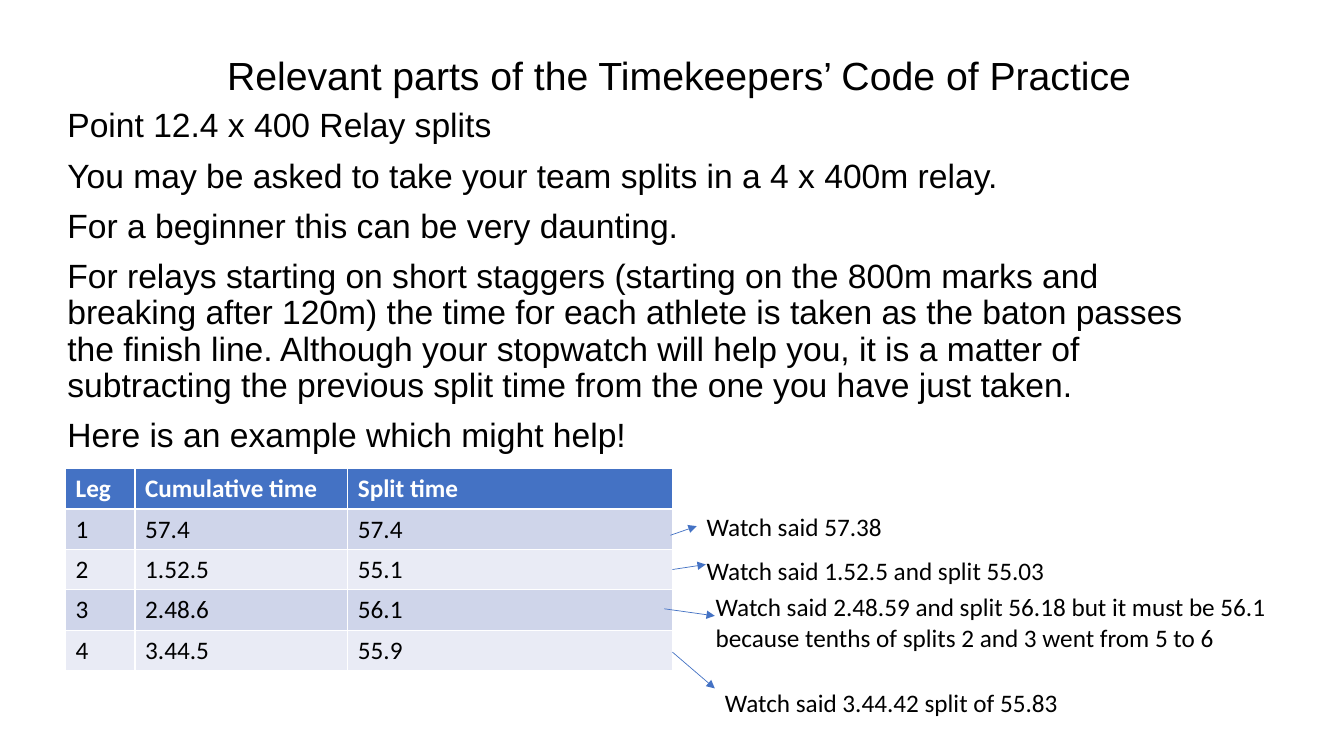
"""Build the slide on relay splits from the Timekeepers' Code of Practice."""
from pptx import Presentation
from pptx.dml.color import RGBColor
from pptx.enum.shapes import MSO_CONNECTOR as Line
from pptx.enum.text import MSO_ANCHOR as Anchor, PP_ALIGN as Align
from pptx.oxml.ns import qn
from pptx.util import Inches, Pt
from lxml.etree import SubElement


def color(code):
    return RGBColor.from_string(code)


def write(frame, text, size=18, font="Calibri", ink="000000", bold=False,
          align=Align.LEFT, space=1.0, gap=0):
    frame.word_wrap = True
    for i, line in enumerate(text.split("\n")):
        para = frame.paragraphs[0] if i == 0 else frame.add_paragraph()
        para.alignment = align
        para.line_spacing = space
        para.space_before = Pt(gap if i else 0)
        run = para.add_run()
        run.text = line
        run.font.size = Pt(size)
        run.font.name = font
        run.font.bold = bold
        run.font.color.rgb = color(ink)


deck = Presentation()
deck.slide_width, deck.slide_height = Inches(13.33), Inches(7.5)
slide = deck.slides.add_slide(deck.slide_layouts[6])
shapes = slide.shapes

title = shapes.add_textbox(Inches(1.05), Inches(0.4), Inches(11.37), Inches(0.75)).text_frame
title.vertical_anchor = Anchor.MIDDLE
write(title, "Relevant parts of the Timekeepers’ Code of Practice",
      size=28, font="Arial", align=Align.CENTER, space=0.9)

body = shapes.add_textbox(Inches(0.57), Inches(1.03), Inches(11.5), Inches(3.55)).text_frame
write(body, "Point 12.4 x 400 Relay splits\n"
      "You may be asked to take your team splits in a 4 x 400m relay.\n"
      "For a beginner this can be very daunting.\n"
      "For relays starting on short staggers (starting on the 800m marks and "
      "breaking after 120m) the time for each athlete is taken as the baton passes "
      "the finish line. Although your stopwatch will help you, it is a matter of "
      "subtracting the previous split time from the one you have just taken.\n"
      "Here is an example which might help!",
      size=24, font="Arial", space=0.9, gap=10)

rows = [
    ("Leg", "Cumulative time", "Split time"),
    ("1", "57.4", "57.4"),
    ("2", "1.52.5", "55.1"),
    ("3", "2.48.6", "56.1"),
    ("4", "3.44.5", "55.9"),
]
table = shapes.add_table(len(rows), 3, Inches(0.65), Inches(4.65), Inches(6.02), Inches(2)).table
for col, width in zip(table.columns, (0.69, 2.11, 3.22)):
    col.width = Inches(width)
for r, row in enumerate(rows):
    table.rows[r].height = Inches(0.4)
    head = r == 0
    fill = "4472C4" if head else ("E9EBF5", "CFD5EA")[r % 2]
    for c, text in enumerate(row):
        cell = table.cell(r, c)
        cell.fill.solid()
        cell.fill.fore_color.rgb = color(fill)
        write(cell.text_frame, text, ink="FFFFFF" if head else "000000", bold=head)

notes = [
    (6.91, 5.02, 5.21, 0.4, "Watch said 57.38"),
    (6.91, 5.46, 4.48, 0.4, "Watch said 1.52.5 and split 55.03"),
    (7, 5.82, 5.77, 0.71, "Watch said 2.48.59 and split 56.18 but it must be 56.1 "
                          "because tenths of splits 2 and 3 went from 5 to 6"),
    (7.09, 6.77, 4.39, 0.4, "Watch said 3.44.42 split of 55.83"),
]
for *place, text in notes:
    box = shapes.add_textbox(*map(Inches, place))
    write(box.text_frame, text)

arrows = [
    (6.65, 5.31, 6.91, 5.22),
    (6.67, 5.65, 7, 5.6),
    (6.59, 6.04, 7.09, 6.11),
    (6.67, 6.47, 7.09, 6.83),
]
for ends in arrows:
    arrow = shapes.add_connector(Line.STRAIGHT, *map(Inches, ends))
    arrow.line.color.rgb = color("4472C4")
    arrow.line.width = Pt(0.5)
    SubElement(arrow.line._get_or_add_ln(), qn("a:tailEnd"), type="triangle")
    SubElement(arrow._element.spPr, qn("a:effectLst"))

deck.save("out.pptx")
